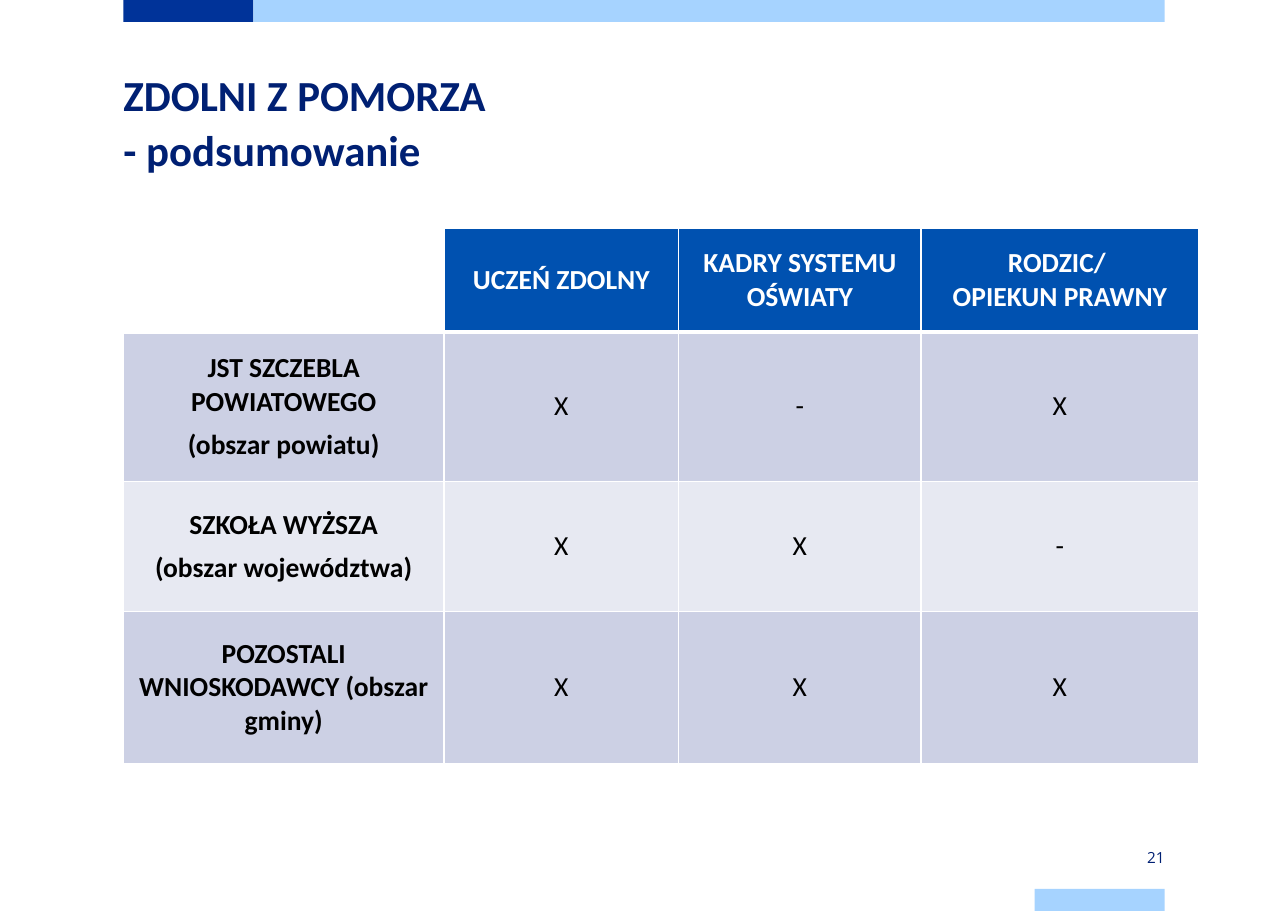
import dataclasses

import lxml.etree
import pptx
import pptx.dml.color
import pptx.enum.shapes
import pptx.enum.text
import pptx.oxml.ns
import pptx.util

Inches = pptx.util.Inches
Pt = pptx.util.Pt
ALIGN = pptx.enum.text.PP_ALIGN
ANCHOR = pptx.enum.text.MSO_ANCHOR


@dataclasses.dataclass(frozen=True)
class Theme:
    dark_blue: str = "003399"
    light_blue: str = "A6D3FF"
    navy: str = "002073"
    header_blue: str = "0051B0"
    bands: tuple = ("CCD0E4", "E7E9F2")
    white: str = "FFFFFF"
    black: str = "000000"
    text_font: str = "Calibri"
    number_font: str = "Open Sans"
    title_size: int = 28
    table_size: int = 18
    number_size: int = 10


def rgb(value):
    return pptx.dml.color.RGBColor.from_string(value)


class SlideBuilder:
    def __init__(self, slide, theme):
        self.slide = slide
        self.theme = theme

    def style(self, paragraph, name, size, color, bold=False):
        font = paragraph.font
        font.name, font.size, font.bold = name, Pt(size), bold
        font.color.rgb = rgb(color)

    def bar(self, left, top, width, color):
        shape = self.slide.shapes.add_shape(
            pptx.enum.shapes.MSO_SHAPE.RECTANGLE,
            Inches(left), Inches(top), Inches(width), Inches(0.2))
        shape.shadow.inherit = False
        shape.fill.solid()
        shape.fill.fore_color.rgb = rgb(color)
        shape.line.fill.background()

    def frame(self, shape, anchor):
        text_frame = shape.text_frame
        text_frame.word_wrap = True
        text_frame.auto_size = pptx.enum.text.MSO_AUTO_SIZE.NONE
        text_frame.vertical_anchor = anchor
        text_frame.margin_left = text_frame.margin_right = 0
        text_frame.margin_top = text_frame.margin_bottom = 0
        return text_frame

    def title(self, text, left, top, width, height):
        shape = self.slide.shapes.title
        shape.left, shape.top = Inches(left), Inches(top)
        shape.width, shape.height = Inches(width), Inches(height)
        paragraph = self.frame(shape, ANCHOR.TOP).paragraphs[0]
        paragraph.text = text
        paragraph.alignment = ALIGN.LEFT
        paragraph.line_spacing = Pt(36)
        self.style(paragraph, self.theme.text_font, self.theme.title_size,
                   self.theme.navy, bold=True)

    def page_number(self, text, left, top, width, height):
        shape = self.slide.shapes.add_textbox(
            Inches(left), Inches(top), Inches(width), Inches(height))
        paragraph = self.frame(shape, ANCHOR.MIDDLE).paragraphs[0]
        paragraph.text = text
        paragraph.alignment = ALIGN.RIGHT
        self.style(paragraph, self.theme.number_font, self.theme.number_size,
                   self.theme.navy)

    def cell_borders(self, cell, widths):
        """Draw white borders; widths maps L, R, T, B to points."""
        qn = pptx.oxml.ns.qn
        properties = cell._tc.get_or_add_tcPr()
        for index, (side, width) in enumerate(widths.items()):
            line = lxml.etree.Element(qn(f"a:ln{side}"), w=str(Pt(width)))
            fill = lxml.etree.SubElement(line, qn("a:solidFill"))
            lxml.etree.SubElement(fill, qn("a:srgbClr"), val=self.theme.white)
            properties.insert(index, line)

    def cell(self, cell, text, fill, color, bold):
        cell.vertical_anchor = ANCHOR.MIDDLE
        if fill:
            cell.fill.solid()
            cell.fill.fore_color.rgb = rgb(fill)
        else:
            cell.fill.background()
        cell.text = text
        for index, paragraph in enumerate(cell.text_frame.paragraphs):
            paragraph.alignment = ALIGN.CENTER
            if index:
                paragraph.space_before = Pt(6)
            self.style(paragraph, self.theme.text_font, self.theme.table_size,
                       color, bold)

    def table(self, rows, left, top, column_widths, row_heights):
        table = self.slide.shapes.add_table(
            len(rows), len(column_widths), Inches(left), Inches(top),
            Inches(sum(column_widths)), Inches(sum(row_heights))).table
        table.first_row = table.horz_banding = False
        for column, width in zip(table.columns, column_widths):
            column.width = Inches(width)
        for row, height in zip(table.rows, row_heights):
            row.height = Inches(height)
        for i, texts in enumerate(rows):
            header = i == 0
            fill = self.theme.header_blue if header else self.theme.bands[(i - 1) % 2]
            color = self.theme.white if header else self.theme.black
            for j, text in enumerate(texts):
                cell = table.cell(i, j)
                self.cell(cell, text, fill if text else None, color, header or j == 0)
                self.cell_borders(cell, {"L": 1, "R": 1, "T": 3 if i == 1 else 1,
                                         "B": 3 if header else 1})


def main():
    presentation = pptx.Presentation()
    presentation.slide_width = Inches(11.69)
    presentation.slide_height = Inches(8.27)
    slide = presentation.slides.add_slide(presentation.slide_layouts[5])
    theme = Theme()
    builder = SlideBuilder(slide, theme)

    builder.bar(1.12, 0, 1.18, theme.dark_blue)
    builder.bar(2.3, 0, 8.27, theme.light_blue)
    builder.bar(9.39, 8.07, 1.18, theme.light_blue)
    builder.title("ZDOLNI Z POMORZA\v- podsumowanie", 1.12, 0.59, 9.45, 1.34)
    builder.table(
        [["", "UCZEŃ ZDOLNY", "KADRY SYSTEMU OŚWIATY", "RODZIC/ \vOPIEKUN PRAWNY"],
         ["JST SZCZEBLA POWIATOWEGO\n(obszar powiatu)", "X", "-", "X"],
         ["SZKOŁA WYŻSZA\n(obszar województwa)", "X", "X", "-"],
         ["POZOSTALI WNIOSKODAWCY (obszar gminy)", "X", "X", "X"]],
        1.12, 2.07, [2.91, 2.13, 2.2, 2.52], [0.94, 1.36, 1.18, 1.38])
    builder.page_number("21", 9.39, 7.68, 1.18, 0.2)
    presentation.save("out.pptx")


if __name__ == "__main__":
    main()
